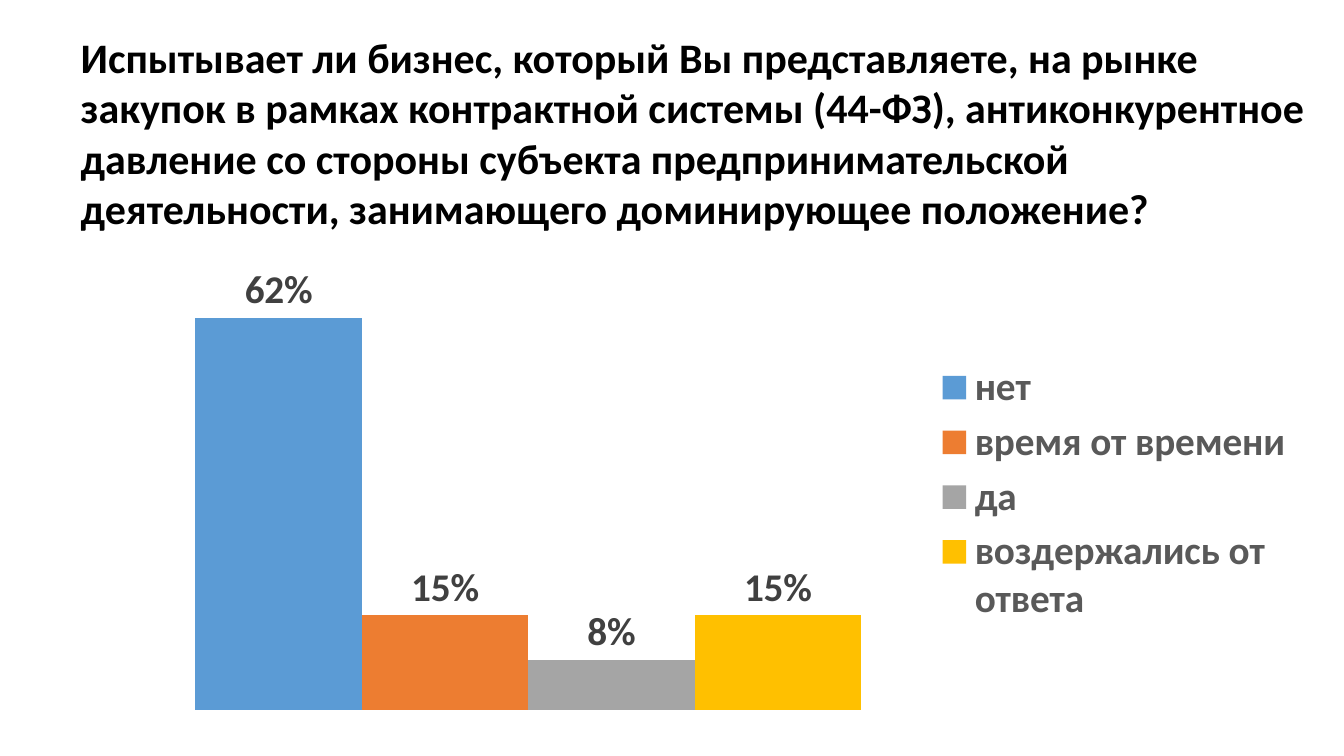
from dataclasses import dataclass

from pptx import Presentation
from pptx.chart.chart import Chart
from pptx.chart.data import CategoryChartData
from pptx.dml.color import RGBColor
from pptx.enum.chart import XL_CHART_TYPE, XL_LABEL_POSITION, XL_LEGEND_POSITION
from pptx.enum.text import MSO_ANCHOR, MSO_AUTO_SIZE, PP_ALIGN
from pptx.oxml import parse_xml
from pptx.oxml.ns import nsdecls, qn
from pptx.slide import Slide
from pptx.text.text import Font
from pptx.util import Inches, Pt


@dataclass(frozen=True)
class Theme:
    face: str = "Calibri"
    title: str = "000000"
    label: str = "404040"
    legend: str = "595959"
    title_size: int = 30
    chart_size: int = 28


@dataclass(frozen=True)
class Answer:
    name: str
    share: float
    color: str


THEME = Theme()
QUESTION = (
    "Испытывает ли бизнес, который Вы представляете, на рынке закупок "
    "в рамках контрактной системы (44-ФЗ), антиконкурентное давление "
    "со стороны субъекта предпринимательской деятельности, "
    "занимающего доминирующее положение?"
)
ANSWERS = [
    Answer("нет", 0.62, "5B9BD5"),
    Answer("время от времени", 0.15, "ED7D31"),
    Answer("да", 0.08, "A5A5A5"),
    Answer("воздержались от ответа", 0.15, "FFC000"),
]


def style(font: Font, size: int, color: str) -> None:
    font.name = THEME.face
    font.size = Pt(size)
    font.bold = True
    font.color.rgb = RGBColor.from_string(color)


def place(part, index: int, inner: bool, x: float, y: float, w: float, h: float) -> None:
    """Give a chart part a fixed layout, in fractions of the chart."""
    for old in part.findall(qn("c:layout")):
        part.remove(old)
    target = '<c:layoutTarget val="inner"/>' if inner else ""
    modes = "".join(f'<c:{side}Mode val="edge"/>' for side in "xy")
    sizes = "".join(
        f'<c:{key} val="{val}"/>' for key, val in zip("xywh", (x, y, w, h))
    )
    part.insert(index, parse_xml(
        f'<c:layout {nsdecls("c")}><c:manualLayout>'
        f"{target}{modes}{sizes}</c:manualLayout></c:layout>"
    ))


def add_title(slide: Slide) -> None:
    title = slide.shapes.title
    title.left, title.top = Inches(0.7), Inches(0.26)
    title.width, title.height = Inches(12.39), Inches(2.12)
    frame = title.text_frame
    frame.word_wrap = True
    frame.auto_size = MSO_AUTO_SIZE.SHAPE_TO_FIT_TEXT
    frame.vertical_anchor = MSO_ANCHOR.TOP
    para = frame.paragraphs[0]
    para.alignment = PP_ALIGN.LEFT
    run = para.add_run()
    run.text = QUESTION
    style(run.font, THEME.title_size, THEME.title)


def add_bars(slide: Slide) -> Chart:
    data = CategoryChartData(number_format="0%")
    data.categories = ["1"]
    for answer in ANSWERS:
        data.add_series(answer.name, [answer.share])
    chart = slide.shapes.add_chart(
        XL_CHART_TYPE.COLUMN_CLUSTERED,
        Inches(1.32), Inches(2.38), Inches(11.58), Inches(5.03), data,
    ).chart
    style(chart.font, THEME.chart_size, THEME.title)
    chart.has_title = False

    axis = chart.value_axis
    axis.minimum_scale, axis.maximum_scale = 0, 0.7
    axis.has_major_gridlines = False
    axis.visible = chart.category_axis.visible = False

    plot = chart.plots[0]
    plot.gap_width, plot.overlap = 75, 0
    plot.vary_by_categories = False
    for series, answer in zip(plot.series, ANSWERS):
        series.format.fill.solid()
        series.format.fill.fore_color.rgb = RGBColor.from_string(answer.color)
        labels = series.data_labels
        labels.show_value = True
        labels.number_format = "0%"
        labels.number_format_is_linked = False
        labels.position = XL_LABEL_POSITION.OUTSIDE_END
        style(labels.font, THEME.chart_size, THEME.label)
    area = chart.element.find(f".//{qn('c:plotArea')}")
    place(area, 0, True, 0, 0.055, 0.677, 0.873)
    return chart


def add_legend(chart: Chart) -> None:
    chart.has_legend = True
    legend = chart.legend
    legend.position = XL_LEGEND_POSITION.RIGHT
    legend.include_in_layout = True
    style(legend.font, THEME.chart_size, THEME.legend)
    place(chart.element.find(f".//{qn('c:legend')}"), 1, False, 0.68, 0.23, 0.32, 0.54)


def main() -> None:
    deck = Presentation()
    deck.slide_width, deck.slide_height = Inches(13.33), Inches(7.5)
    slide = deck.slides.add_slide(deck.slide_layouts.get_by_name("Title Only"))
    add_title(slide)
    add_legend(add_bars(slide))
    deck.save("out.pptx")


if __name__ == "__main__":
    main()
